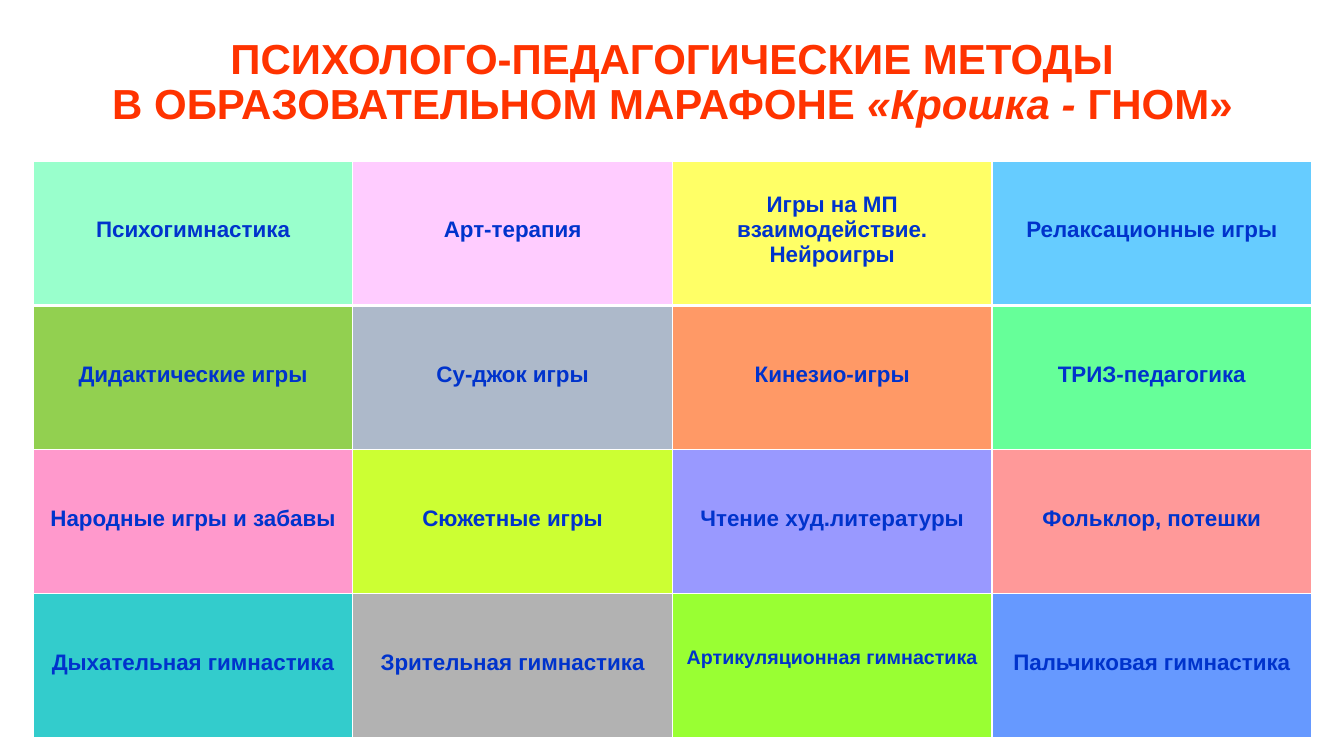
from lxml import etree
from pptx import Presentation
from pptx.dml.color import RGBColor
from pptx.enum.text import MSO_ANCHOR, PP_ALIGN
from pptx.oxml.ns import qn
from pptx.util import Emu, Pt

CENTER = PP_ALIGN.CENTER
TOP = MSO_ANCHOR.TOP
MIDDLE = MSO_ANCHOR.MIDDLE

EMU_PER_PX = 9144  # 100 px to the inch
BLANK_LAYOUT = 6
FONT = "Arial"

COLORS = {
    "title": "FF3300", "label": "0033CC", "border": "FFFFFF",
    "mint": "99FFCC", "lilac": "FFCCFF", "lemon": "FFFF66", "sky": "66CCFF",
    "olive": "92D050", "steel": "ADB9CA", "orange": "FF9966", "emerald": "66FF99",
    "pink": "FF99CC", "lime": "CCFF33", "violet": "9999FF", "salmon": "FF9999",
    "teal": "33CCCC", "grey": "B2B2B2", "green": "99FF33", "blue": "6699FF",
}

TITLE_SPANS = [
    ("ПСИХОЛОГО-ПЕДАГОГИЧЕСКИЕ МЕТОДЫ", False),
    ("\n", False),
    ("В ОБРАЗОВАТЕЛЬНОМ МАРАФОНЕ ", False),
    ("«Крошка -", True),
    (" ГНОМ»", False),
]

METHODS = [
    [("Психогимнастика", "mint"), ("Арт-терапия", "lilac"),
     ("Игры на МП взаимодействие.\nНейроигры", "lemon"), ("Релаксационные игры", "sky")],
    [("Дидактические игры", "olive"), ("Су-джок игры", "steel"),
     ("Кинезио-игры", "orange"), ("ТРИЗ-педагогика", "emerald")],
    [("Народные игры и забавы", "pink"), ("Сюжетные игры", "lime"),
     ("Чтение худ.литературы", "violet"), ("Фольклор, потешки", "salmon")],
    [("Дыхательная гимнастика", "teal"), ("Зрительная гимнастика", "grey"),
     ("Артикуляционная гимнастика", "green"), ("Пальчиковая гимнастика", "blue")],
]

COLUMN_WIDTH, ROW_HEIGHT = 317, 143
LABEL_SIZE = 16
LABEL_TOP = 56
# Labels that differ from the rest: (font size, top margin)
SPECIAL_LABELS = {"lemon": (16, 31), "green": (14, 53)}


def px(value):
    return Emu(value * EMU_PER_PX)


def color(name):
    return RGBColor.from_string(COLORS[name])


def set_format(target, values):
    for name, value in values.items():
        setattr(target, name, value)


def add_span(para, text, size, color_name, italic=False):
    span = para.add_run()
    span.text = text
    set_format(span.font, {"name": FONT, "size": Pt(size), "bold": True, "italic": italic})
    span.font.color.rgb = color(color_name)


def add_title(page, left, top, width, height):
    box = page.shapes.add_textbox(px(left), px(top), px(width), px(height))
    set_format(box.text_frame, {"word_wrap": True, "vertical_anchor": MIDDLE})
    para = box.text_frame.paragraphs[0]
    set_format(para, {"alignment": CENTER, "line_spacing": 0.9})
    for text, italic in TITLE_SPANS:
        if text == "\n":
            para.add_line_break()
        else:
            add_span(para, text, 30, "title", italic)


def set_borders(cell, widths):
    properties = cell._tc.get_or_add_tcPr()
    for position, (side, width) in enumerate(widths.items()):
        line = etree.Element(qn(f"a:ln{side}"), w=str(Pt(width)))
        fill = etree.SubElement(line, qn("a:solidFill"))
        etree.SubElement(fill, qn("a:srgbClr"), val=COLORS["border"])
        properties.insert(position, line)


def fill_cell(cell, text, fill_name):
    size, margin_top = SPECIAL_LABELS.get(fill_name, (LABEL_SIZE, LABEL_TOP))
    set_format(cell, {"margin_top": px(margin_top), "vertical_anchor": TOP})
    cell.fill.solid()
    cell.fill.fore_color.rgb = color(fill_name)
    for index, line in enumerate(text.split("\n")):
        frame = cell.text_frame
        para = frame.add_paragraph() if index else frame.paragraphs[0]
        para.alignment = CENTER
        add_span(para, line, size, "label")


def add_methods_table(page, left, top):
    row_count, column_count = len(METHODS), len(METHODS[0])
    table = page.shapes.add_table(
        row_count, column_count, px(left), px(top),
        px(column_count * COLUMN_WIDTH), px(row_count * ROW_HEIGHT)).table
    for column in table.columns:
        column.width = px(COLUMN_WIDTH)
    for row_index, methods in enumerate(METHODS):
        table.rows[row_index].height = px(ROW_HEIGHT)
        # The line under the first row is thicker
        widths = {"L": 1, "R": 1, "T": 3 if row_index == 1 else 1,
                  "B": 3 if row_index == 0 else 1}
        for column_index, (text, fill_name) in enumerate(methods):
            cell = table.cell(row_index, column_index)
            fill_cell(cell, text, fill_name)
            set_borders(cell, widths)


def main():
    deck = Presentation()
    set_format(deck, {"slide_width": px(1333), "slide_height": px(750)})
    page = deck.slides.add_slide(deck.slide_layouts[BLANK_LAYOUT])
    # Heading
    add_title(page, 92, 40, 1150, 86)
    # Grid of methods
    add_methods_table(page, 33, 160)
    deck.save("out.pptx")


if __name__ == "__main__":
    main()
